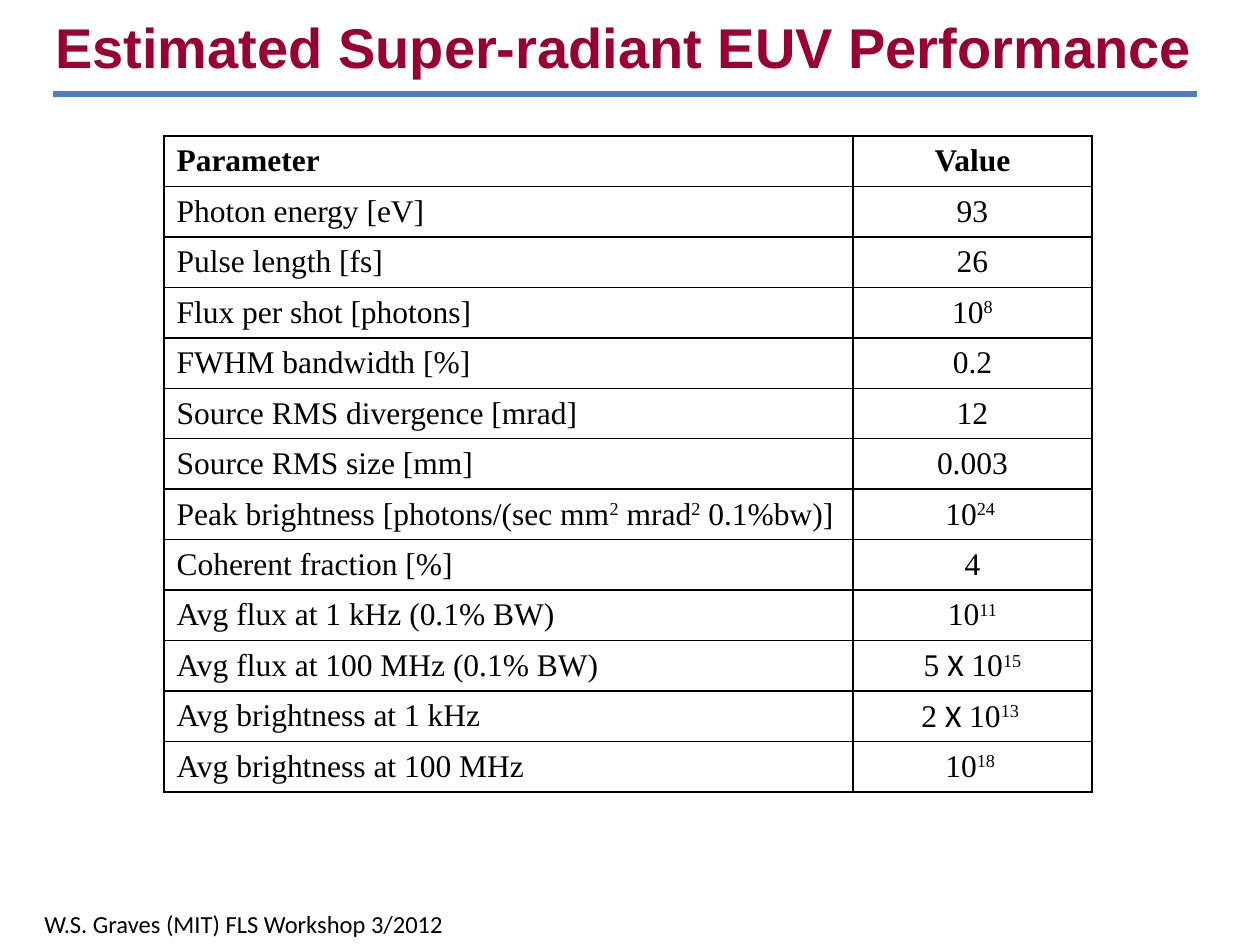
from lxml import etree
from pptx import Presentation
from pptx import util as u
from pptx.dml.color import RGBColor
from pptx.enum import shapes, text
from pptx.oxml import ns

PX = u.Inches(1) / 126
BLACK = RGBColor(0x00, 0x00, 0x00)
BLUE = RGBColor(0x4B, 0x7E, 0xBC)
WINE = RGBColor(0x99, 0x00, 0x33)

ROWS = [
    ("Parameter", "Value"),
    ("Photon energy [eV]", "93"),
    ("Pulse length [fs]", "26"),
    ("Flux per shot [photons]", "10|^8"),
    ("FWHM bandwidth [%]", "0.2"),
    ("Source RMS divergence [mrad]", "12"),
    ("Source RMS size [mm]", "0.003"),
    ("Peak brightness [photons/(sec mm|^2| mrad|^2| 0.1%bw)]", "10|^24 "),
    ("Coherent fraction [%]", "4"),
    ("Avg flux at 1 kHz (0.1% BW)", "10|^11"),
    ("Avg flux at 100 MHz (0.1% BW)", "5 |X| 10|^15"),
    ("Avg brightness at 1 kHz", "2 |X| 10|^13 "),
    ("Avg brightness at 100 MHz", "10|^18 "),
]


def px(*sizes):
    return [u.Emu(round(size * PX)) for size in sizes]


def label(words, box, size, face, color, bold, align):
    frame = slide.shapes.add_textbox(*px(*box)).text_frame
    frame.word_wrap = True
    frame.auto_size = text.MSO_AUTO_SIZE.SHAPE_TO_FIT_TEXT
    frame.text = words
    para = frame.paragraphs[0]
    para.alignment = align
    font = para.runs[0].font
    font.size, font.name, font.bold = u.Pt(size), face, bold
    font.color.rgb = color


deck = Presentation()
deck.slide_width, deck.slide_height = px(1260, 945)
slide = deck.slides.add_slide(deck.slide_layouts[6])

label("W.S. Graves (MIT) FLS Workshop 3/2012", (32, 903, 472, 43),
      14, "Calibri", BLACK, False, text.PP_ALIGN.LEFT)

rule = slide.shapes.add_connector(shapes.MSO_CONNECTOR.STRAIGHT, *px(53, 94, 1197, 94))
rule.line.color.rgb = BLUE
rule.line.width = u.Pt(3)
etree.SubElement(rule._element.spPr, ns.qn("a:effectLst"))

grid = slide.shapes.add_table(len(ROWS), 2, *px(164, 136, 928, 655)).table
grid.first_row = grid.horz_banding = False
for col, wide in zip(grid.columns, px(689, 239)):
    col.width = wide

for r, row in enumerate(ROWS):
    for c, words in enumerate(row):
        cell = grid.cell(r, c)
        cell.vertical_anchor = text.MSO_ANCHOR.MIDDLE
        para = cell.text_frame.paragraphs[0]
        para.alignment = text.PP_ALIGN.CENTER if c else text.PP_ALIGN.LEFT
        for part in words.split("|"):
            run = para.add_run()
            run.text = part.lstrip("^")
            font = run.font
            font.size, font.bold = u.Pt(18), r == 0
            font.name = "Calibri" if part == "X" else "Times New Roman"
            font.color.rgb = BLACK
            if part.startswith("^"):
                font._element.set("baseline", "30000")
        props = cell._tc.get_or_add_tcPr()
        for side in ("lnL", "lnR", "lnT", "lnB"):
            edge = etree.SubElement(props, ns.qn("a:" + side), w=str(u.Pt(1)))
            fill = etree.SubElement(edge, ns.qn("a:solidFill"))
            etree.SubElement(fill, ns.qn("a:srgbClr"), val=str(BLACK))
        cell.fill.background()

label("Estimated Super-radiant EUV Performance", (9, 6, 1230, 79),
      32, "Arial", WINE, True, text.PP_ALIGN.CENTER)

deck.save("out.pptx")
